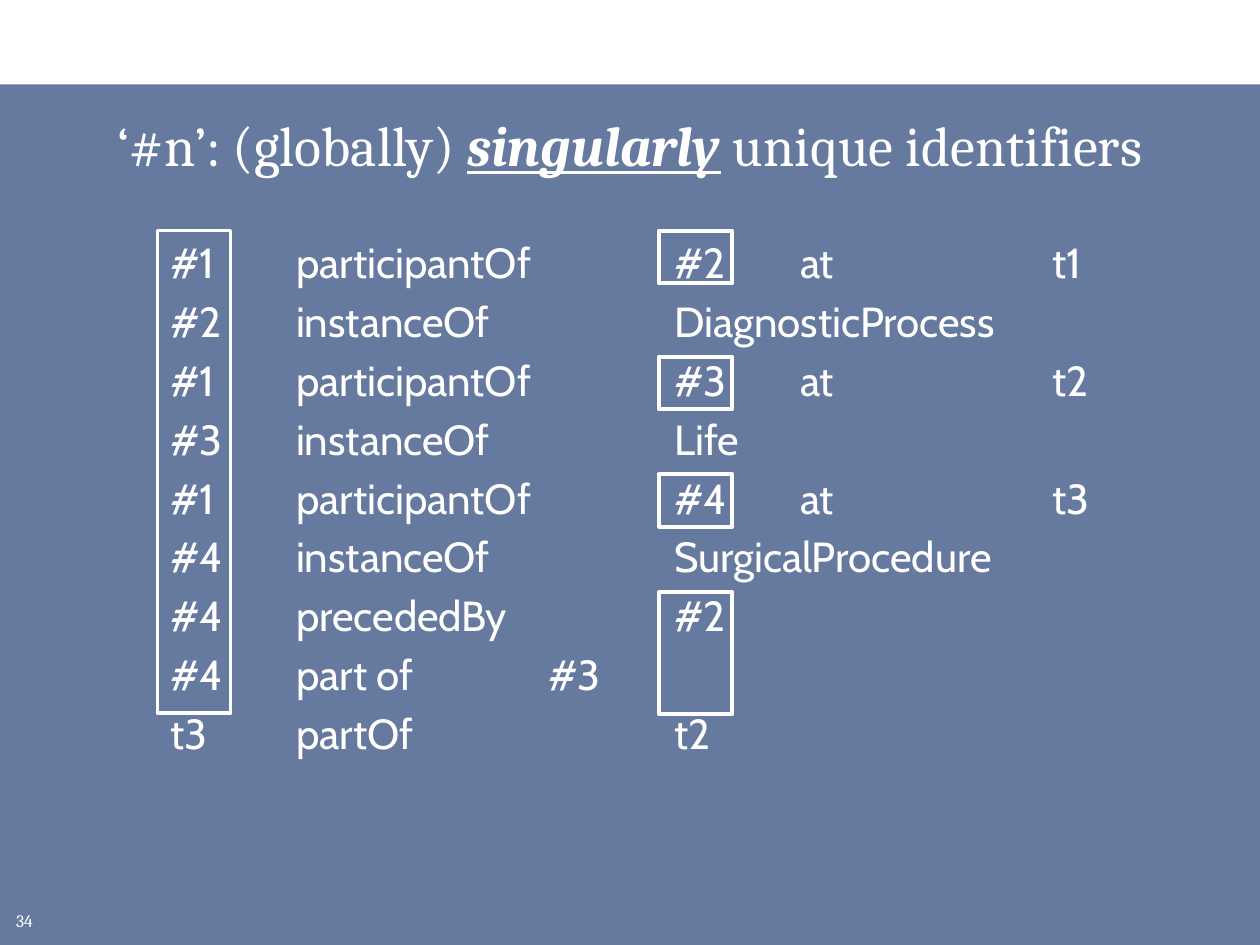
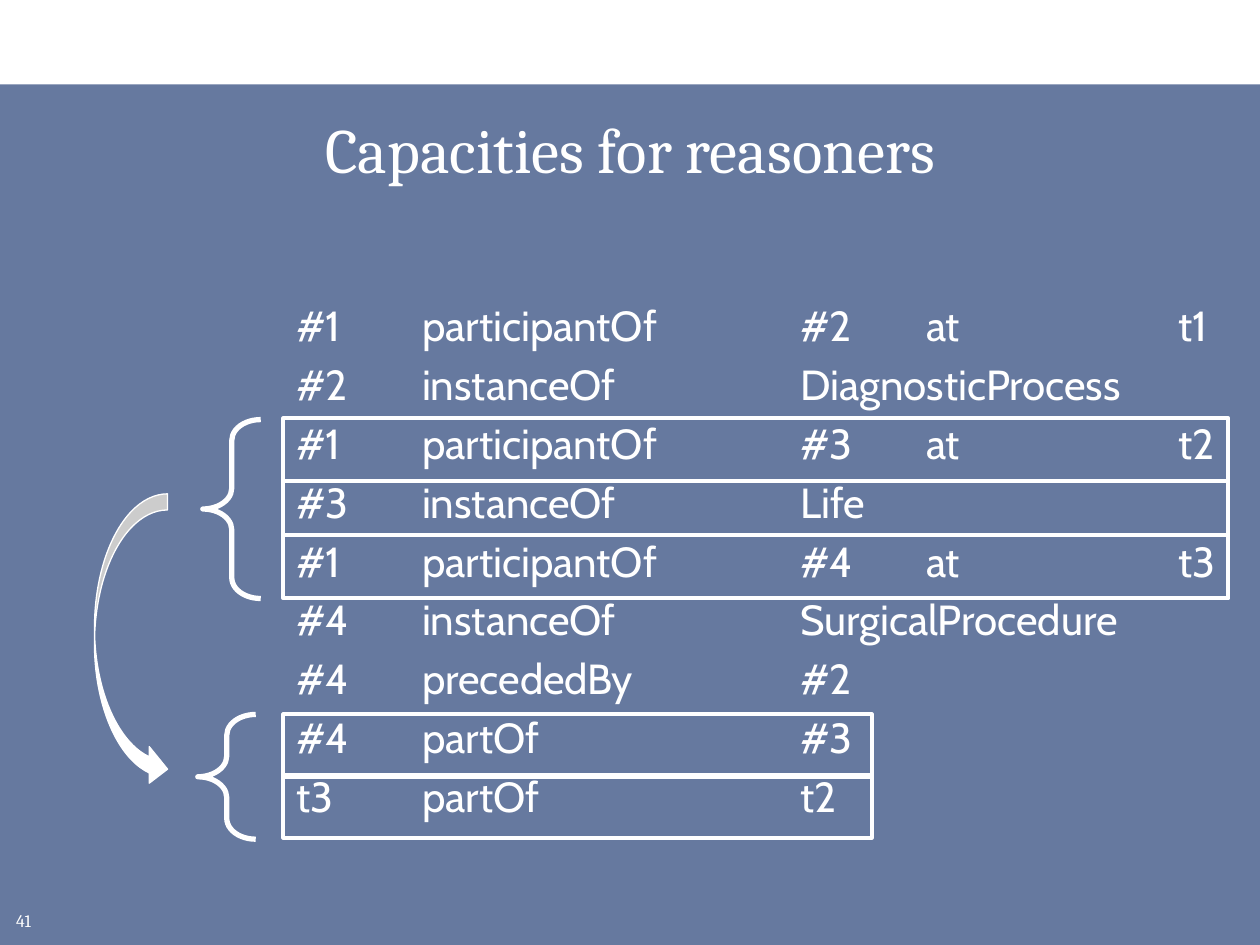
from dataclasses import dataclass

from lxml.etree import SubElement
from pptx import Presentation
from pptx.dml.color import RGBColor
from pptx.enum.shapes import MSO_SHAPE as Shape
from pptx.enum.text import MSO_ANCHOR, MSO_AUTO_SIZE, PP_ALIGN
from pptx.oxml.ns import qn
from pptx.util import Inches, Pt


@dataclass(frozen=True)
class Theme:
    ink: RGBColor = RGBColor(0xFF, 0xFF, 0xFF)
    band: RGBColor = RGBColor(0x00, 0x20, 0x60)
    band_alpha: int = 60000
    heading_font: str = "Cambria"
    fact_font: str = "Cabin"
    fact_size: int = 24
    number_size: int = 10
    frame_line: float = 2.25
    brace_line: float = 3
    arrow_line: float = 0.75


theme = Theme()
deck = Presentation()
deck.slide_width, deck.slide_height = Inches(10), Inches(7.5)
COL = deck.slide_width / 10
ROW = deck.slide_height / 7.5


def add_run(paragraph, text, font, size):
    run = paragraph.add_run()
    run.text = text
    run.font.name, run.font.size = font, Pt(size)
    run.font.color.rgb = theme.ink
    return run


def add_outline(slide, kind, grid, line, adjustments=()):
    """Add an unfilled, white-lined shape; grid is left, top, width, height in cells."""
    left, top, width, height = grid
    outline = slide.shapes.add_shape(
        kind, int(left * COL), int(top * ROW), int(width * COL), int(height * ROW))
    outline.shadow.inherit = False
    outline.fill.background()
    outline.line.color.rgb = theme.ink
    outline.line.width = Pt(line)
    for index, value in enumerate(adjustments):
        outline.adjustments[index] = value
    return outline


# Tabs step through the grid, one column each.
shared_facts = [
    "#1\tparticipantOf\t\t#2\tat\t\tt1",
    "#2\tinstanceOf\t\tDiagnosticProcess",
    "#1\tparticipantOf\t\t#3\tat\t\tt2",
    "#3\tinstanceOf\t\tLife",
    "#1\tparticipantOf\t\t#4\tat\t\tt3",
    "#4\tinstanceOf\t\tSurgicalProcedure",
    "#4\tprecededBy\t\t#2",
]
time_fact = "t3\tpartOf\t\t\tt2"

# Number, title runs (text, emphasised), title size, part fact, first column, top row
pages = [
    ("34", [("‘#n’: (globally) ", False), ("singularly", True),
            (" unique identifiers", False)], 32, "#4\tpart of\t\t#3", 1, 1.83),
    ("41", [("Capacities for reasoners", False)], 36, "#4\tpartOf\t\t\t#3", 2, 2.33),
]

# The tinted band belongs to the layout, so every slide shows it.
layout = deck.slide_layouts[1]
slides = [deck.slides.add_slide(layout) for page in pages]
band = add_outline(slides[0], Shape.RECTANGLE, (0, 0.67, 10, 6.83), 1)
band.fill.solid()
band.fill.fore_color.rgb = theme.band
band.line.fill.background()
tint = band.fill._xPr.find(qn("a:solidFill"))[0]
SubElement(tint, qn("a:alpha"), val=str(theme.band_alpha))
layout.shapes.element.insert(2, band.element)

for slide, page in zip(slides, pages):
    number, title_runs, title_size, part_fact, first_col, top_row = page

    number_box = slide.shapes.add_textbox(
        int(0.03 * COL), int(7.17 * ROW), int(0.39 * COL), int(0.25 * ROW))
    add_run(number_box.text_frame.paragraphs[0], number,
            theme.heading_font, theme.number_size)

    title = slide.shapes.title
    title.left, title.top = int(0.25 * COL), int(0.83 * ROW)
    title.width, title.height = int(9.5 * COL), int(0.83 * ROW)
    facts = slide.placeholders[1]
    facts.left, facts.top = int(0.25 * COL), int(top_row * ROW)
    facts.width, facts.height = int(9.67 * COL), int(3 * ROW)
    for holder in (title, facts):
        holder.text_frame.auto_size = MSO_AUTO_SIZE.NONE
        holder.text_frame.vertical_anchor = MSO_ANCHOR.TOP
        holder.text_frame.word_wrap = True

    heading = title.text_frame.paragraphs[0]
    heading.alignment = PP_ALIGN.CENTER
    for text, emphasised in title_runs:
        run = add_run(heading, text, theme.heading_font, title_size)
        run.font.bold = run.font.italic = run.font.underline = emphasised

    for index, fact in enumerate([*shared_facts, part_fact, time_fact]):
        frame = facts.text_frame
        line = frame.add_paragraph() if index else frame.paragraphs[0]
        properties = line._p.get_or_add_pPr()
        properties.set("marL", "0")
        properties.set("indent", "0")
        properties.set("defTabSz", str(int(COL)))
        SubElement(properties, qn("a:buNone"))
        line.space_before = Pt(0.2 * theme.fact_size if index else 0)
        add_run(line, "\t" * first_col + fact, theme.fact_font, theme.fact_size)

identifiers, reasoners = slides

# Frames around the subject identifiers and the object identifiers
add_outline(identifiers, Shape.RECTANGLE, (1.25, 1.83, 0.58, 3.83), theme.frame_line)
for top, height in [(1.83, 0.42), (2.83, 0.42), (3.76, 0.42), (4.7, 0.97)]:
    add_outline(identifiers, Shape.RECTANGLE, (5.23, top, 0.58, height), theme.frame_line)

# Premises above, conclusions below
for top, width, height in [(5.67, 4.67, 0.5), (4.25, 7.5, 0.5), (3.32, 7.5, 0.5),
                           (3.82, 7.5, 0.43), (6.15, 4.67, 0.5)]:
    add_outline(reasoners, Shape.RECTANGLE, (2.25, top, width, height), theme.frame_line)
for brace in [(1.61, 3.33, 0.46, 1.42), (1.57, 5.67, 0.46, 0.99)]:
    add_outline(reasoners, Shape.LEFT_BRACE, brace, theme.brace_line, (0.36, 0.5))

inference = add_outline(reasoners, Shape.CURVED_RIGHT_ARROW, (0.75, 3.92, 0.58, 2.33),
                        theme.arrow_line, (0.22, 0.5, 0.25))
inference.fill.solid()
inference.fill.fore_color.rgb = theme.ink

deck.save("out.pptx")
